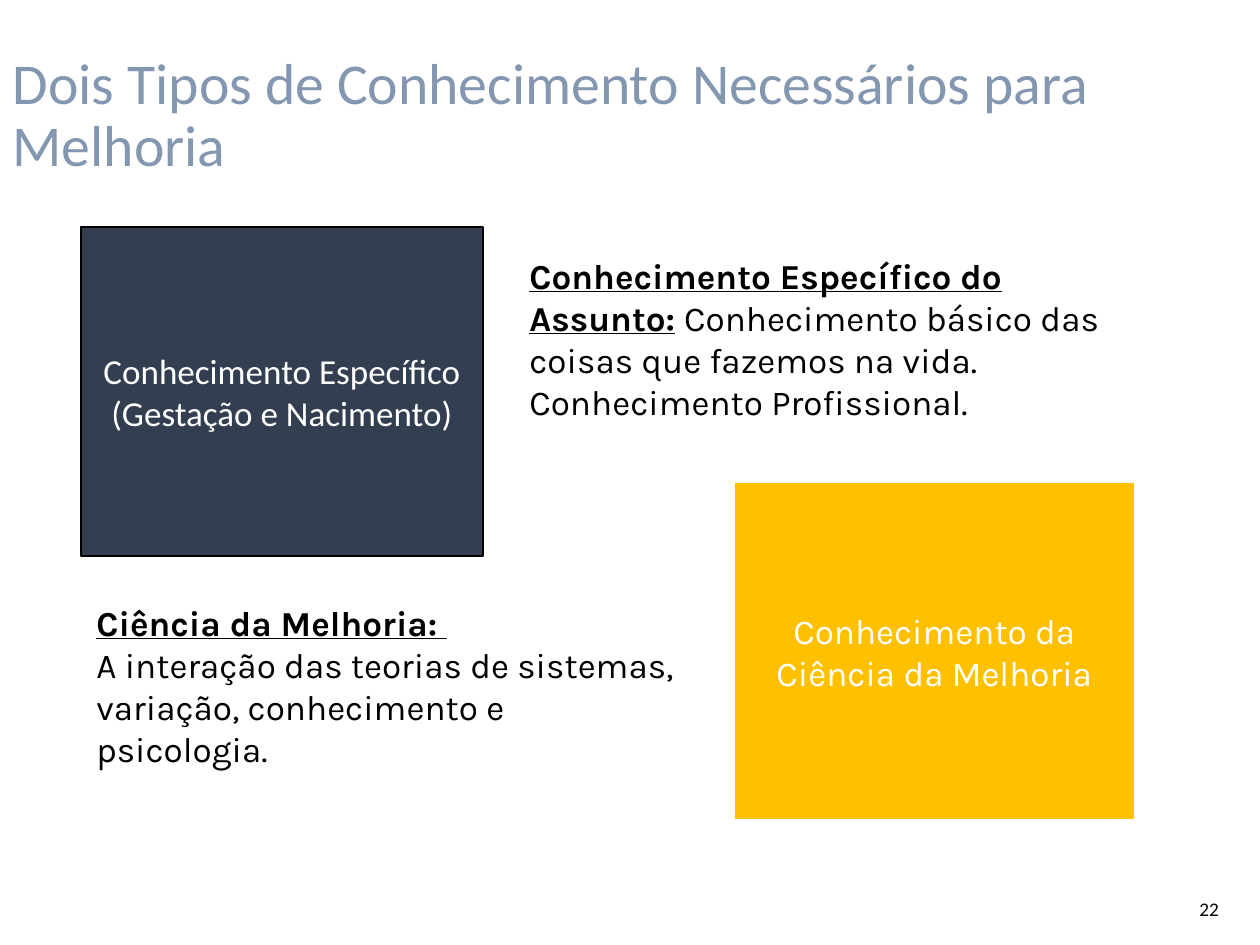
from pptx import Presentation, util as u
from pptx.dml.color import RGBColor
from pptx.enum import shapes, text

SCALE = 914400 / 126  # EMU per px
BLACK, WHITE, NAVY, AMBER, BLUE = "000000", "FFFFFF", "333F50", "FFC000", "8497B0"


def px(*lengths):
    return [u.Emu(round(length * SCALE)) for length in lengths]


def color(target, value):
    target.rgb = RGBColor.from_string(value)


def write(frame, paragraphs, ink, face="Karla", size=20, align=text.PP_ALIGN.LEFT,
          anchor=text.MSO_ANCHOR.TOP, wrap=True):
    """Fill a frame; each paragraph is a list of (wording, font values)."""
    frame.word_wrap, frame.vertical_anchor = wrap, anchor
    for i, runs in enumerate(paragraphs):
        paragraph = frame.paragraphs[0] if i == 0 else frame.add_paragraph()
        paragraph.alignment = align
        for wording, values in runs:
            if wording == "\n":
                paragraph.add_line_break()
                continue
            run = paragraph.add_run()
            run.text = wording
            for key, value in {"name": face, "size": u.Pt(size), **values}.items():
                setattr(run.font, key, value)
            color(run.font.color, ink)


def heading(slide, box, wording):
    title = slide.shapes.title
    title.left, title.top, title.width, title.height = px(*box)
    write(title.text_frame, [[(wording, {})]], BLUE, "Calibri", 33,
          anchor=text.MSO_ANCHOR.MIDDLE)
    title.text_frame.paragraphs[0].line_spacing = 0.9


def panel(parent, box, fill, outline=None):
    block = parent.add_shape(shapes.MSO_SHAPE.RECTANGLE, *px(*box))
    block.shadow.inherit = False
    block.fill.solid()
    color(block.fill.fore_color, fill)
    if outline:
        color(block.line.color, outline)
        block.line.width = u.Pt(0.75)
    else:
        block.line.fill.background()
    return block


def subject_panel(slide, box):
    block = panel(slide.shapes, box, NAVY, BLACK)
    lines = ["Conhecimento Específico", "(Gestação e Nacimento)"]
    write(block.text_frame, [[(line, {})] for line in lines], WHITE, "Calibri",
          align=text.PP_ALIGN.CENTER, anchor=text.MSO_ANCHOR.MIDDLE, wrap=False)


def science_panel(slide, box):
    left, top, width, height = box
    group = slide.shapes.add_group_shape()
    panel(group.shapes, box, AMBER)
    caption = panel(group.shapes, (left + 11, top + 120, width - 22, 97), AMBER)
    write(caption.text_frame, [[("Conhecimento da Ciência da Melhoria", {})]], WHITE,
          align=text.PP_ALIGN.CENTER)


def note(slide, box, runs, **style):
    frame = slide.shapes.add_textbox(*px(*box)).text_frame
    write(frame, [runs], BLACK, **style)


def main():
    deck = Presentation()
    deck.slide_width, deck.slide_height = px(1260, 945)
    slide = deck.slides.add_slide(deck.slide_layouts[5])
    term = {"bold": True, "underline": True}

    heading(slide, (0, 38, 1134, 157),
            "Dois Tipos de Conhecimento Necessários para Melhoria")

    # The two kinds of knowledge
    science_panel(slide, (735, 483, 399, 336))
    subject_panel(slide, (81, 227, 402, 329))

    # Their definitions
    note(slide, (84, 595, 609, 140), [
        ("Ciência da Melhoria: ", term), ("\n", {}),
        ("A interação das teorias de sistemas, variação, conhecimento e psicologia.", {})])
    note(slide, (517, 248, 638, 183), [
        ("Conhecimento Específico do Assunto:", term), (" ", {"bold": True}),
        ("Conhecimento básico das coisas que fazemos na vida. "
         "Conhecimento Profissional.", {})])

    # Page number
    note(slide, (1187, 891, 73, 50), [("22", {})], face="Calibri", size=11)

    deck.save("out.pptx")


if __name__ == "__main__":
    main()
